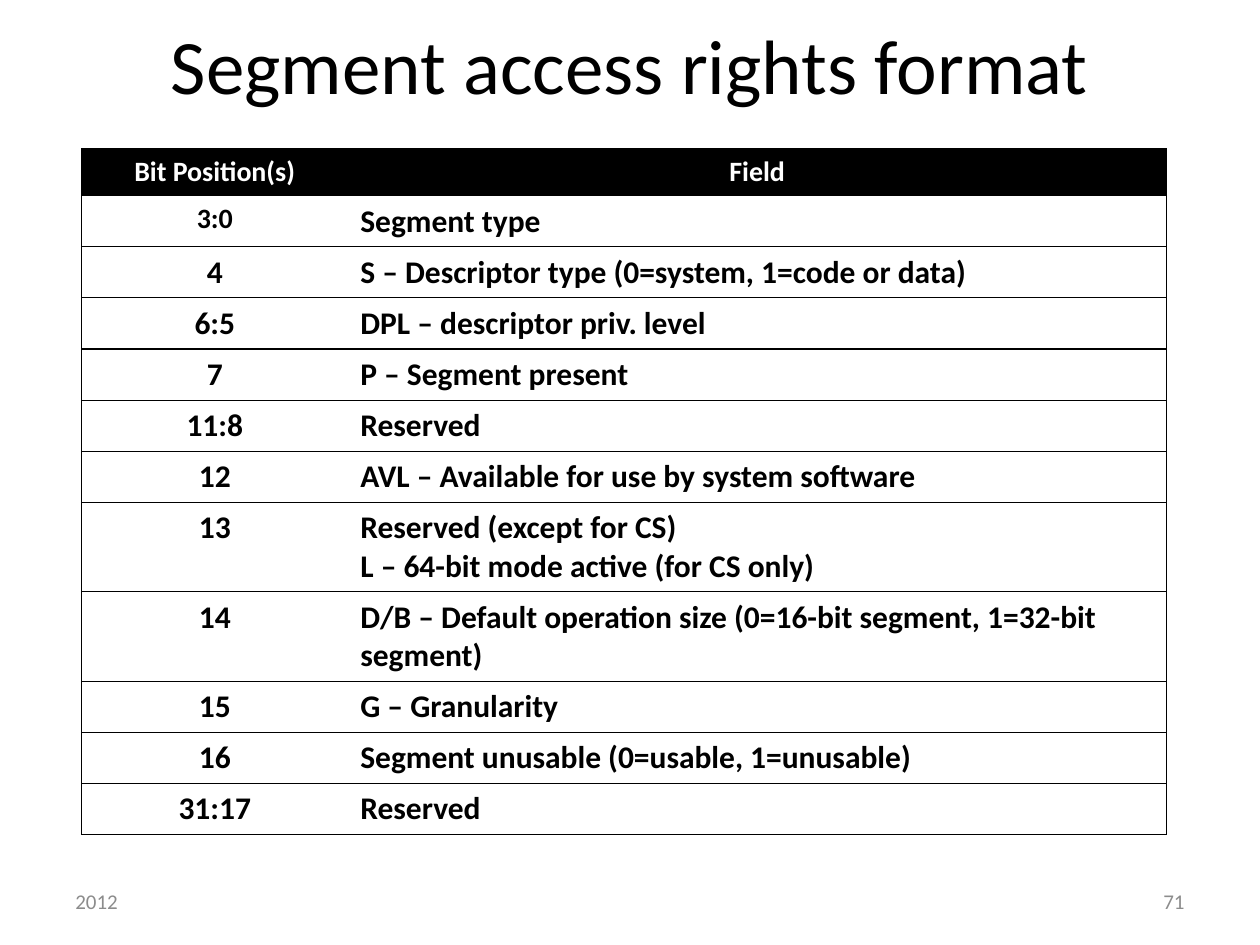
from lxml import etree
from pptx import Presentation
from pptx.dml.color import RGBColor
from pptx.enum.text import MSO_ANCHOR, PP_ALIGN
from pptx.oxml.ns import qn
from pptx.util import Cm, Pt

LEFT, CENTER, RIGHT = PP_ALIGN.LEFT, PP_ALIGN.CENTER, PP_ALIGN.RIGHT
MIDDLE = MSO_ANCHOR.MIDDLE
FONT = "Calibri"
BLACK, WHITE, GREY = "000000", "FFFFFF", "8C8C8C"

TITLE = "Segment access rights format"
FOOTERS = [("2012", 1.27, LEFT), ("71", 18.21, RIGHT)]
ROWS = [
    ("Bit Position(s)", "Field"),
    ("3:0", "Segment type"),
    ("4", "S – Descriptor type (0=system, 1=code or data)"),
    ("6:5", "DPL – descriptor priv. level"),
    ("7", "P – Segment present"),
    ("11:8", "Reserved"),
    ("12", "AVL – Available for use by system software"),
    ("13", "Reserved (except for CS)\nL – 64-bit mode active (for CS only)"),
    ("14", "D/B – Default operation size (0=16-bit segment, 1=32-bit segment)"),
    ("15", "G – Granularity"),
    ("16", "Segment unusable (0=usable, 1=unusable)"),
    ("31:17", "Reserved"),
]
COLUMN_WIDTHS = [5.36, 16.51]
HEADER_HEIGHT, ROW_HEIGHT, TALL_HEIGHT = 0.93, 1.03, 1.8
TALL_BITS = {"13", "14"}
SMALL_CELLS = {"Bit Position(s)", "Field", "3:0"}


def rgb(value):
    return RGBColor.from_string(value)


def write(frame, text, size, color, align, bold=False):
    frame.text = text
    for para in frame.paragraphs:
        para.alignment = align
        for span in para.runs:
            span.font.name = FONT
            span.font.size = Pt(size)
            span.font.bold = bold
            span.font.color.rgb = rgb(color)


def add_borders(cell, visible_sides):
    properties = cell._tc.get_or_add_tcPr()
    for side in "LRTB":
        line = etree.SubElement(properties, qn(f"a:ln{side}"), w=str(Pt(0.75)))
        if side in visible_sides:
            fill = etree.SubElement(line, qn("a:solidFill"))
            etree.SubElement(fill, qn("a:srgbClr"), val=BLACK)
        else:
            etree.SubElement(line, qn("a:noFill"))


def row_height(index, bits):
    if index == 0:
        return HEADER_HEIGHT
    return TALL_HEIGHT if bits in TALL_BITS else ROW_HEIGHT


def add_rights_table(page):
    heights = [row_height(index, row[0]) for index, row in enumerate(ROWS)]
    table = page.shapes.add_table(
        len(ROWS), len(COLUMN_WIDTHS), Cm(1.65), Cm(3),
        Cm(sum(COLUMN_WIDTHS)), Cm(sum(heights))).table
    for column, width in zip(table.columns, COLUMN_WIDTHS):
        column.width = Cm(width)
    for index, (row, height) in enumerate(zip(ROWS, heights)):
        table.rows[index].height = Cm(height)
        header = index == 0
        for position, text in enumerate(row):
            cell = table.cell(index, position)
            align = CENTER if header or position == 0 else LEFT
            size = 16 if text in SMALL_CELLS else 18
            write(cell.text_frame, text, size, WHITE if header else BLACK, align, True)
            add_borders(cell, "TB" + "LR"[position])
            cell.fill.solid()
            cell.fill.fore_color.rgb = rgb(BLACK if header else WHITE)


def main():
    deck = Presentation()
    deck.slide_width, deck.slide_height = Cm(25.4), Cm(19.05)
    page = deck.slides.add_slide(deck.slide_layouts[5])

    title = page.shapes.title
    title.left, title.top, title.width, title.height = Cm(1.27), Cm(-0.3), Cm(22.86), Cm(3.18)
    title.text_frame.vertical_anchor = MIDDLE
    write(title.text_frame, TITLE, 44, BLACK, CENTER)

    add_rights_table(page)

    for text, left, align in FOOTERS:
        box = page.shapes.add_textbox(Cm(left), Cm(17.65), Cm(5.92), Cm(1.02))
        box.text_frame.word_wrap = True
        box.text_frame.vertical_anchor = MIDDLE
        write(box.text_frame, text, 12, GREY, align)

    deck.save("out.pptx")


if __name__ == "__main__":
    main()
